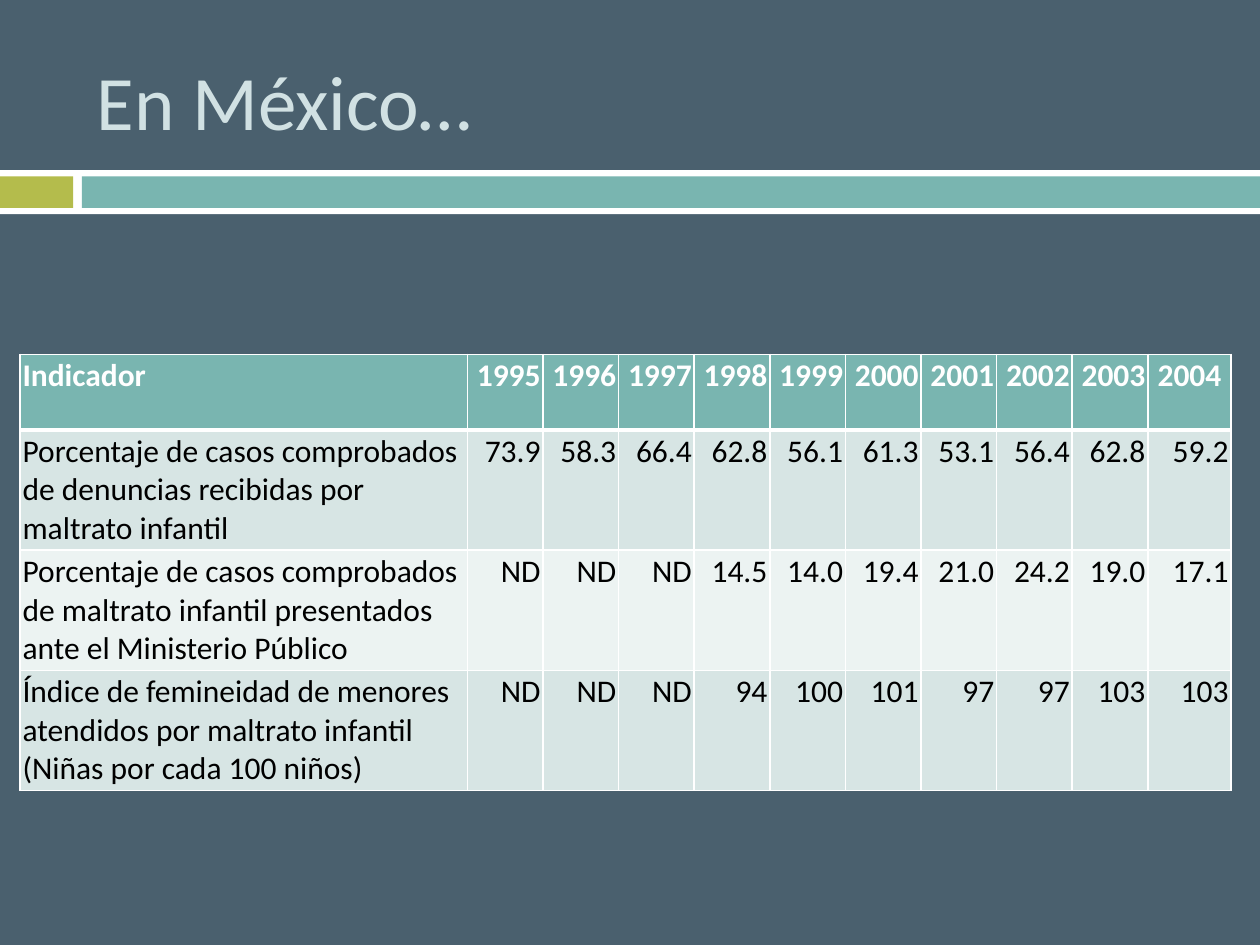
"""Build the slide on child abuse indicators in Mexico, 1995 to 2004."""
import dataclasses

import lxml.etree
import pptx
import pptx.dml.color
import pptx.enum.shapes
import pptx.enum.text
import pptx.oxml.ns
import pptx.util

Pt = pptx.util.Pt
RGB = pptx.dml.color.RGBColor.from_string
ALIGN = pptx.enum.text.PP_ALIGN
ANCHOR = pptx.enum.text.MSO_ANCHOR

TITLE = "En México…"
YEARS = ["1995", "1996", "1997", "1998", "1999",
         "2000", "2001", "2002", "2003", "2004 "]
INDICATORS = [
    ("Porcentaje de casos comprobados de denuncias recibidas por maltrato infantil",
     ["73.9", "58.3", "66.4", "62.8", "56.1", "61.3", "53.1", "56.4", "62.8", "59.2"]),
    ("Porcentaje de casos comprobados de maltrato infantil presentados "
     "ante el Ministerio Público",
     ["ND", "ND", "ND", "14.5", "14.0", "19.4", "21.0", "24.2", "19.0", "17.1"]),
    ("Índice de femineidad de menores atendidos por maltrato infantil "
     "(Niñas por cada 100 niños)",
     ["ND", "ND", "ND", "94", "100", "101", "97", "97", "103", "103"]),
]


@dataclasses.dataclass(frozen=True)
class Theme:
    font: str = "Calibri"
    title_size: float = 44
    table_size: float = 18
    background: str = "4A606E"
    title: str = "D1E1E3"
    white: str = "FFFFFF"
    black: str = "000000"
    olive: str = "B4BC4C"
    teal: str = "79B5B0"
    stripes: tuple = ("D7E5E4", "ECF3F2")


THEME = Theme()
SLIDE_W, SLIDE_H = 720, 540
BANDS = [
    (0, 97.2, SLIDE_W, 25.2, THEME.white),
    (0, 100.8, 41.8, 18, THEME.olive),
    (46.8, 100.8, SLIDE_W - 46.8, 18, THEME.teal),
]
TITLE_BOX = (48.2, 18, 642.2, 77.8)
TABLE_LEFT, TABLE_TOP = 11.5, 202.5
COLUMNS = [255.6] + [43.2] * 9 + [47.5]
ROWS = [43.2] + [68.4] * len(INDICATORS)
CELL_INSET = 1.4


def write(tf, text, *, size, color, bold=False, align=ALIGN.LEFT):
    p = tf.paragraphs[0]
    p.alignment = align
    r = p.add_run()
    r.text = text
    r.font.name = THEME.font
    r.font.size = Pt(size)
    r.font.bold = bold
    r.font.color.rgb = RGB(color)


def add_band(slide, x, y, w, h, color):
    kind = pptx.enum.shapes.MSO_SHAPE.RECTANGLE
    sp = slide.shapes.add_shape(kind, Pt(x), Pt(y), Pt(w), Pt(h))
    sp.shadow.inherit = False
    sp.fill.solid()
    sp.fill.fore_color.rgb = RGB(color)
    sp.line.fill.background()


def set_borders(cell, top, bottom):
    tc_pr = cell._tc.get_or_add_tcPr()
    qn = pptx.oxml.ns.qn
    for side, width in (("L", 1), ("R", 1), ("T", top), ("B", bottom)):
        ln = lxml.etree.SubElement(tc_pr, qn("a:ln" + side), w=str(Pt(width)))
        fill = lxml.etree.SubElement(ln, qn("a:solidFill"))
        lxml.etree.SubElement(fill, qn("a:srgbClr"), val=THEME.white)


def format_cell(cell, text, row, col):
    header = row == 0
    set_borders(cell, 3 if row == 1 else 1, 3 if header else 1)
    cell.fill.solid()
    cell.fill.fore_color.rgb = RGB(THEME.teal if header else THEME.stripes[(row - 1) % 2])
    cell.margin_left = cell.margin_right = Pt(CELL_INSET)
    cell.margin_top = cell.margin_bottom = Pt(CELL_INSET)
    cell.vertical_anchor = ANCHOR.TOP
    write(cell.text_frame, text, size=THEME.table_size, bold=header,
          color=THEME.white if header else THEME.black,
          align=ALIGN.RIGHT if col else ALIGN.LEFT)


def add_indicator_table(slide):
    rows = [["Indicador", *YEARS]] + [[name, *values] for name, values in INDICATORS]
    table = slide.shapes.add_table(len(ROWS), len(COLUMNS), Pt(TABLE_LEFT), Pt(TABLE_TOP),
                                   Pt(sum(COLUMNS)), Pt(sum(ROWS))).table
    for column, width in zip(table.columns, COLUMNS):
        column.width = Pt(width)
    for table_row, height in zip(table.rows, ROWS):
        table_row.height = Pt(height)
    for row, texts in enumerate(rows):
        for col, text in enumerate(texts):
            format_cell(table.cell(row, col), text, row, col)


def main():
    prs = pptx.Presentation()
    prs.slide_width, prs.slide_height = Pt(SLIDE_W), Pt(SLIDE_H)
    slide = prs.slides.add_slide(prs.slide_layouts.get_by_name("Title Only"))
    slide.background.fill.solid()
    slide.background.fill.fore_color.rgb = RGB(THEME.background)
    for band in BANDS:
        add_band(slide, *band)
    title = slide.shapes.title
    title.left, title.top, title.width, title.height = map(Pt, TITLE_BOX)
    title.text_frame.vertical_anchor = ANCHOR.MIDDLE
    write(title.text_frame, TITLE, size=THEME.title_size, color=THEME.title)
    add_indicator_table(slide)
    prs.save("out.pptx")


if __name__ == "__main__":
    main()
